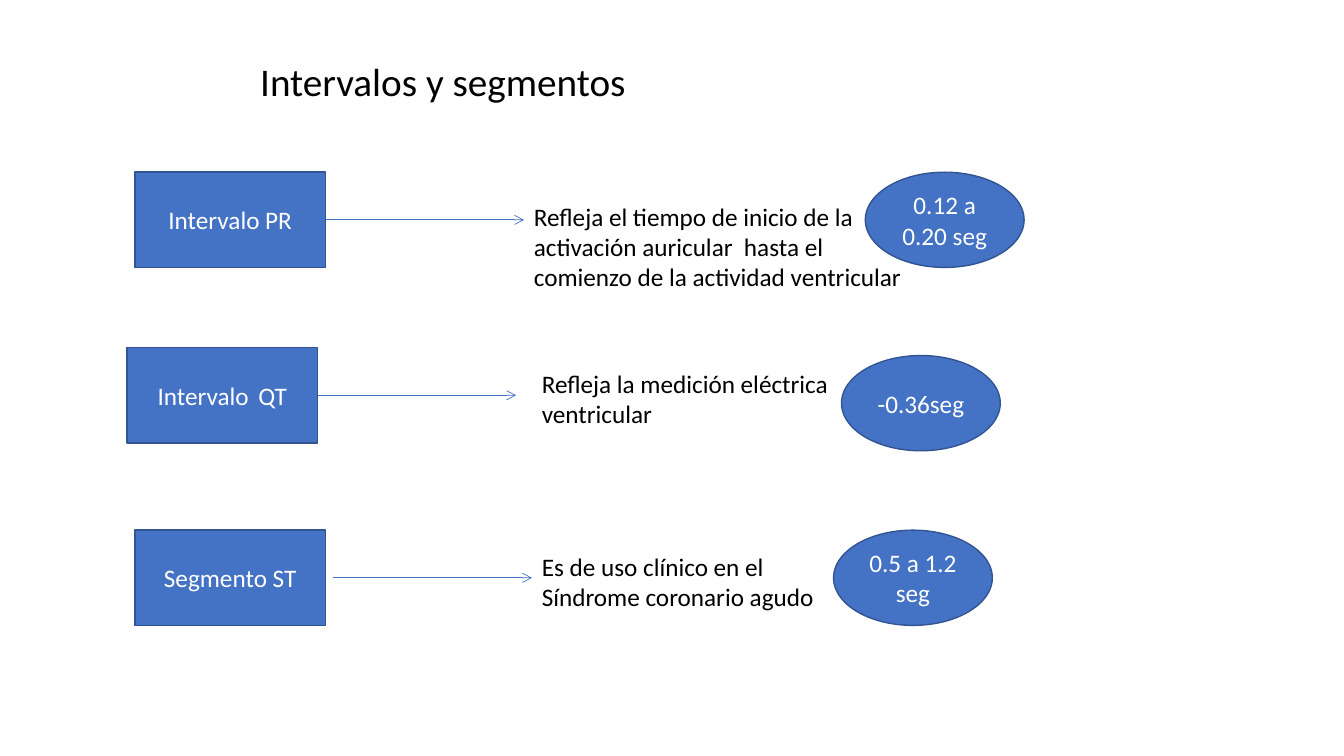
from lxml.etree import SubElement
from pptx import Presentation
from pptx.dml.color import RGBColor
from pptx.enum.shapes import MSO_CONNECTOR as Connector, MSO_SHAPE as Shape
from pptx.enum.text import MSO_ANCHOR as Anchor, MSO_AUTO_SIZE as AutoSize, PP_ALIGN as Align
from pptx.oxml.ns import qn
from pptx.util import Inches, Mm, Pt

# Content: columns are counted in grid steps from the left edge
TITLE = "Intervalos y segmentos"
ROWS = [
    dict(label="Intervalo PR", meaning=["Refleja el tiempo de inicio de la activación auricular  hasta el "
                                        "comienzo de la actividad ventricular"],
         duration="0.12 a 0.20 seg", top=21.7, box=17, arrow=41, text=66, oval=109,
         text_drop=3, text_height=12.8, oval_drop=0),
    dict(label="Intervalo \tQT", meaning=["Refleja la medición eléctrica ventricular"],
         duration="-0.36seg", top=43.8, box=16, arrow=40, text=67, oval=106,
         text_drop=2, text_height=9, oval_drop=1),
    dict(label="Segmento ST", meaning=["Es de uso clínico en el", "Síndrome coronario agudo"],
         duration="0.5 a 1.2 seg", top=66.8, box=17, arrow=42, text=67, oval=105,
         text_drop=2, text_height=9, oval_drop=0),
]
COLORS = {"fill": "4472C4", "outline": "325491", "dark": "000000", "light": "FFFFFF"}
FONT = "Calibri"

# Grid of 2 mm steps
STEP = Mm(2)
BOX_WIDTH, OVAL_WIDTH, SHAPE_HEIGHT = 24, 20, 12
ARROW_LENGTH, TEXT_WIDTH = 25, 51


def color(name):
    return RGBColor.from_string(COLORS[name])


def steps(*counts):
    return [round(count * STEP) for count in counts]


def write(shape, lines, size=18, ink="dark", align=Align.LEFT, anchor=Anchor.TOP):
    frame = shape.text_frame
    frame.word_wrap = True
    frame.auto_size = AutoSize.NONE
    frame.vertical_anchor = anchor
    for index, line in enumerate(lines):
        paragraph = frame.paragraphs[0] if index == 0 else frame.add_paragraph()
        paragraph.alignment = align
        run = paragraph.add_run()
        run.text = line
        run.font.name, run.font.size = FONT, Pt(size)
        run.font.color.rgb = color(ink)


def add_filled(kind, text, left, top, width):
    shape = slide.shapes.add_shape(kind, *steps(left, top, width, SHAPE_HEIGHT))
    shape.shadow.inherit = False
    shape.fill.solid()
    shape.fill.fore_color.rgb = color("fill")
    shape.line.color.rgb = color("outline")
    shape.line.width = Pt(1)
    write(shape, [text], ink="light", align=Align.CENTER, anchor=Anchor.MIDDLE)


def add_arrow(left, middle):
    arrow = slide.shapes.add_connector(
        Connector.STRAIGHT, *steps(left, middle, left + ARROW_LENGTH, middle))
    arrow.line.color.rgb = color("fill")
    arrow.line.width = Pt(0.5)
    SubElement(arrow.line._get_or_add_ln(), qn("a:tailEnd"), type="arrow")
    SubElement(arrow._element.spPr, qn("a:effectLst"))


presentation = Presentation()
presentation.slide_width, presentation.slide_height = Inches(13.33), Inches(7.5)
slide = presentation.slides.add_slide(presentation.slide_layouts[5])

# Title
title = slide.shapes.title
title.left, title.top, title.width, title.height = steps(31.5, 6.6, 64, 7.2)
write(title, [TITLE], size=28)

# One row per interval: box, arrow, meaning, duration
for row in ROWS:
    top = row["top"]
    add_filled(Shape.RECTANGLE, row["label"], row["box"], top, BOX_WIDTH)
    add_arrow(row["arrow"], top + SHAPE_HEIGHT / 2)
    meaning = slide.shapes.add_textbox(
        *steps(row["text"], top + row["text_drop"], TEXT_WIDTH, row["text_height"]))
    write(meaning, row["meaning"])
    add_filled(Shape.OVAL, row["duration"], row["oval"], top + row["oval_drop"], OVAL_WIDTH)

presentation.save("out.pptx")
